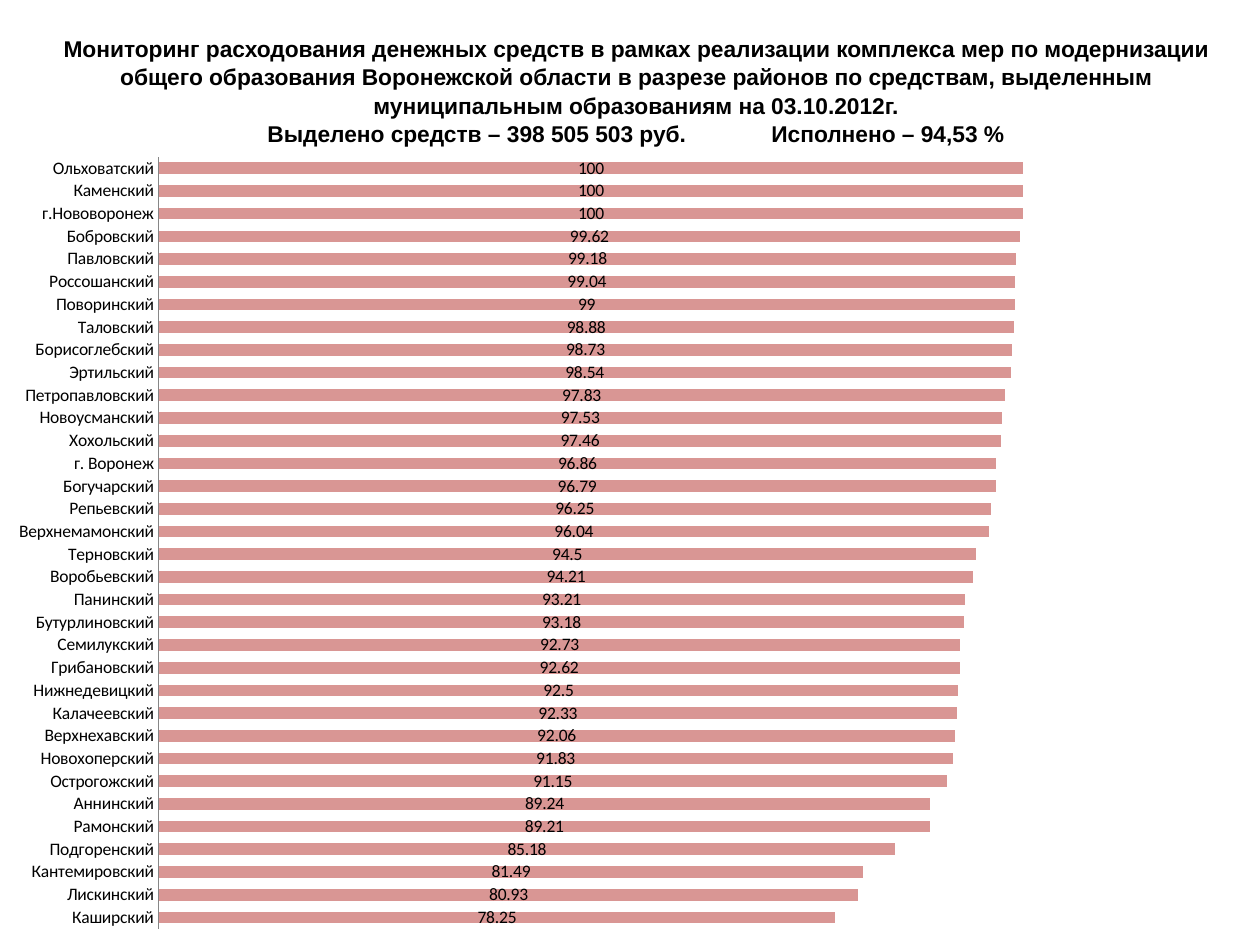
from lxml import etree
from pptx import Presentation
from pptx.chart.data import CategoryChartData
from pptx.dml.color import RGBColor
from pptx.enum.chart import XL_CHART_TYPE, XL_LABEL_POSITION, XL_TICK_MARK
from pptx.enum.text import MSO_ANCHOR, PP_ALIGN
from pptx.oxml.ns import qn
from pptx.util import Cm, Pt

BAR_STACKED = XL_CHART_TYPE.BAR_STACKED
LABEL_CENTER = XL_LABEL_POSITION.CENTER
NO_TICKS = XL_TICK_MARK.NONE
MIDDLE = MSO_ANCHOR.MIDDLE
CENTER = PP_ALIGN.CENTER

# Content
HEADING = (
    "Мониторинг расходования денежных средств в рамках реализации комплекса мер "
    "по модернизации общего образования Воронежской области в разрезе районов "
    "по средствам, выделенным муниципальным образованиям на 03.10.2012г."
)
TOTALS = ("Выделено средств – 398 505 503 руб.", "Исполнено – 94,53 %")
SPENDING = [  # district, percent spent, from the bottom bar up
    ("Каширский", 78.25), ("Лискинский", 80.93), ("Кантемировский", 81.49),
    ("Подгоренский", 85.18), ("Рамонский", 89.21), ("Аннинский", 89.24),
    ("Острогожский", 91.15), ("Новохоперский", 91.83), ("Верхнехавский", 92.06),
    ("Калачеевский", 92.33), ("Нижнедевицкий", 92.5), ("Грибановский", 92.62),
    ("Семилукский", 92.73), ("Бутурлиновский", 93.18), ("Панинский", 93.21),
    ("Воробьевский", 94.21), ("Терновский", 94.5), ("Верхнемамонский", 96.04),
    ("Репьевский", 96.25), ("Богучарский", 96.79), ("г. Воронеж", 96.86),
    ("Хохольский", 97.46), ("Новоусманский", 97.53), ("Петропавловский", 97.83),
    ("Эртильский", 98.54), ("Борисоглебский", 98.73), ("Таловский", 98.88),
    ("Поворинский", 99), ("Россошанский", 99.04), ("Павловский", 99.18),
    ("Бобровский", 99.62), ("г.Нововоронеж", 100), ("Каменский", 100),
    ("Ольховатский", 100),
]
COLORS = {"text": "000000", "bar": "D99694", "axis": "868686"}
PLOT_AREA = {"x": 0.13, "y": 0.02, "w": 0.85, "h": 0.96}  # shares of the chart


def style_font(font, name, size, bold=False):
    font.name = name
    font.size = Pt(size)
    font.bold = bold
    font.color.rgb = RGBColor.from_string(COLORS["text"])


def add_heading(page):
    box = page.shapes.add_textbox(Cm(0.51), Cm(0.53), Cm(24.61), Cm(2.59))
    frame = box.text_frame
    frame.word_wrap = True
    frame.vertical_anchor = MIDDLE
    para = frame.paragraphs[0]
    para.text = HEADING + "\v" + "\t\t".join(TOTALS)
    para.alignment = CENTER
    para.line_spacing = 1.04
    style_font(para.font, "Arial", 13, bold=True)


def place_plot(chart):
    """Fix the inner plot area so that the bars start at a set position."""
    plot_area = chart._chartSpace.chart.plotArea
    for old in plot_area.findall(qn("c:layout")):
        plot_area.remove(old)
    layout = etree.Element(qn("c:layout"))
    manual = etree.SubElement(layout, qn("c:manualLayout"))
    settings = {"layoutTarget": "inner", "xMode": "edge", "yMode": "edge", **PLOT_AREA}
    for tag, value in settings.items():
        etree.SubElement(manual, qn(f"c:{tag}")).set("val", str(value))
    plot_area.insert(0, layout)


def add_spending_chart(page):
    data = CategoryChartData()
    data.categories = [district for district, _ in SPENDING]
    data.add_series("Series 1", [percent for _, percent in SPENDING])
    chart = page.shapes.add_chart(
        BAR_STACKED, Cm(0), Cm(2.84), Cm(24.61), Cm(16.21), data
    ).chart
    chart.has_legend = False
    chart.has_title = False
    style_font(chart.font, "Calibri", 10)
    place_plot(chart)

    # Axes
    districts = chart.category_axis
    districts.major_tick_mark = NO_TICKS
    districts.minor_tick_mark = NO_TICKS
    districts.format.line.color.rgb = RGBColor.from_string(COLORS["axis"])
    percents = chart.value_axis
    percents.minimum_scale = 0
    percents.maximum_scale = 120
    percents.has_major_gridlines = False
    percents.visible = False

    # Bars and their values
    plot = chart.plots[0]
    plot.gap_width = 95
    plot.overlap = 100
    plot.vary_by_categories = False
    fill = plot.series[0].format.fill
    fill.solid()
    fill.fore_color.rgb = RGBColor.from_string(COLORS["bar"])
    plot.has_data_labels = True
    labels = plot.data_labels
    labels.show_value = True
    labels.position = LABEL_CENTER
    style_font(labels.font, "Calibri", 10)


def main():
    deck = Presentation()
    deck.slide_width = Cm(25.4)
    deck.slide_height = Cm(19.05)
    page = deck.slides.add_slide(deck.slide_layouts[6])
    add_heading(page)
    add_spending_chart(page)
    deck.save("out.pptx")


if __name__ == "__main__":
    main()
